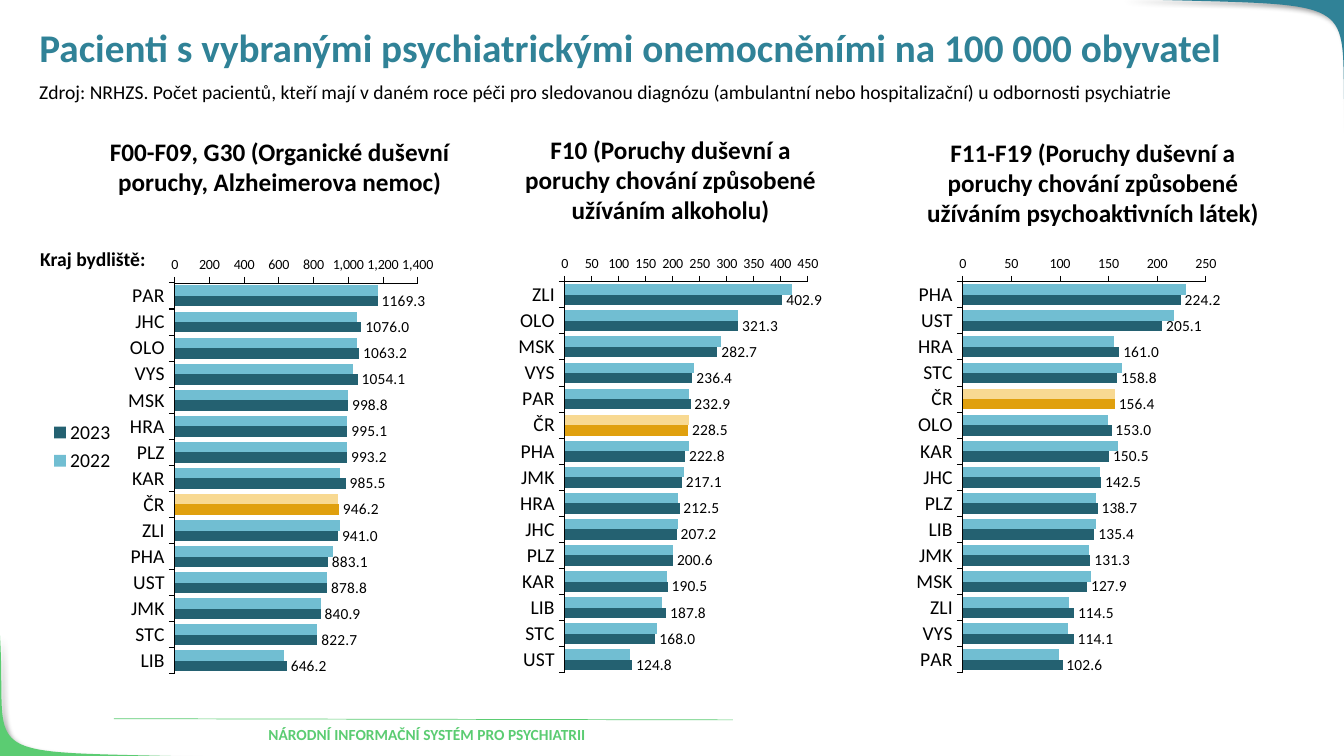
from lxml import etree
from pptx import Presentation
from pptx.chart.data import CategoryChartData
from pptx.dml.color import RGBColor
from pptx.enum.chart import (XL_CHART_TYPE, XL_LABEL_POSITION,
                             XL_LEGEND_POSITION, XL_TICK_MARK)
from pptx.enum.shapes import MSO_CONNECTOR
from pptx.enum.text import MSO_ANCHOR, MSO_AUTO_SIZE, PP_ALIGN
from pptx.oxml.ns import qn
from pptx.util import Cm, Pt

BAR = XL_CHART_TYPE.BAR_CLUSTERED
OUTSIDE_END = XL_LABEL_POSITION.OUTSIDE_END
LEGEND_LEFT = XL_LEGEND_POSITION.LEFT
TICK_OUT, TICK_NONE = XL_TICK_MARK.OUTSIDE, XL_TICK_MARK.NONE
STRAIGHT = MSO_CONNECTOR.STRAIGHT
LEFT, CENTER = PP_ALIGN.LEFT, PP_ALIGN.CENTER
MIDDLE = MSO_ANCHOR.MIDDLE
GROW, NO_FIT = MSO_AUTO_SIZE.SHAPE_TO_FIT_TEXT, MSO_AUTO_SIZE.NONE

FONT = "Calibri"
TEAL, GREEN, BLACK = "308297", "5BCC72", "000000"
# series name, bar colour, colour of the national average
SERIES = (("2022", "71BED2", "F8D992"), ("2023", "246171", "E0A00E"))
AVERAGE = "ČR"
PLOT = {"x": 0.341, "y": 0.156, "w": 0.612, "h": 0.822}
CHART_SIZE = (10.01, 11.99)

# heading, heading box, chart position, axis maximum and step, regions, values
PANELS = (
    ("F00-F09, G30 (Organické duševní poruchy, Alzheimerova nemoc)",
     (1.88, 3.3, 10.34, 1.8), (0.99, 5.26), (1400, 200),
     "PAR JHC OLO VYS MSK HRA PLZ KAR ČR ZLI PHA UST JMK STC LIB",
     (1170, 1050, 1050, 1030, 1000, 990, 990, 950, 940, 950, 910, 880, 840,
      820, 630),
     (1169.3, 1076, 1063.2, 1054.1, 998.8, 995.1, 993.2, 985.5, 946.2, 941,
      883.1, 878.8, 840.9, 822.7, 646.2)),
    ("F10 (Poruchy duševní a poruchy chování způsobené užíváním alkoholu)",
     (12.67, 3.25, 8.46, 2.57), (10.82, 5.23), (450, 50),
     "ZLI OLO MSK VYS PAR ČR PHA JMK HRA JHC PLZ KAR LIB STC UST",
     (420, 320, 290, 240, 230, 230, 230, 220, 210, 210, 200, 190, 180, 170,
      120),
     (402.9, 321.3, 282.7, 236.4, 232.9, 228.5, 222.8, 217.1, 212.5, 207.2,
      200.6, 190.5, 187.8, 168, 124.8)),
    ("F11-F19 (Poruchy duševní a poruchy chování způsobené užíváním "
     "psychoaktivních látek)",
     (22.68, 3.33, 9.73, 2.57), (20.85, 5.23), (250, 50),
     "PHA UST HRA STC ČR OLO KAR JHC PLZ LIB JMK MSK ZLI VYS PAR",
     (230, 217, 156, 164, 157, 149, 160, 141, 137, 137, 130, 132, 109, 108,
      99),
     (224.2, 205.1, 161, 158.8, 156.4, 153, 150.5, 142.5, 138.7, 135.4, 131.3,
      127.9, 114.5, 114.1, 102.6)),
)


def rgb(color):
    return RGBColor.from_string(color)


def set_font(font, size, color=BLACK, bold=False):
    values = {"name": FONT, "size": Pt(size), "bold": bold}
    for name, value in values.items():
        setattr(font, name, value)
    font.color.rgb = rgb(color)


def write(sp, text, size, color=BLACK, bold=False, align=LEFT):
    p = sp.text_frame.paragraphs[0]
    p.alignment = align
    r = p.add_run()
    r.text = text
    set_font(r.font, size, color, bold)
    return p


def add_text(slide, box, text, size, wrap=True, **style):
    sp = slide.shapes.add_textbox(*map(Cm, box))
    sp.text_frame.word_wrap = wrap
    sp.text_frame.auto_size = GROW
    write(sp, text, size, **style)


def add_title(slide, box, text):
    sp = slide.shapes.title
    sp.left, sp.top, sp.width, sp.height = map(Cm, box)
    tf = sp.text_frame
    for name, value in {"word_wrap": True, "auto_size": NO_FIT,
                        "vertical_anchor": MIDDLE}.items():
        setattr(tf, name, value)
    write(sp, text, 28, TEAL, True).line_spacing = 0.9


def add_corner(slide, curve, corner, color, steps=40):
    """Fill the area between a cubic curve and a slide corner."""
    points = []
    for i in range(steps + 1):
        t = i / steps
        weights = ((1 - t) ** 3, 3 * t * (1 - t) ** 2,
                   3 * t ** 2 * (1 - t), t ** 3)
        points.append(tuple(Cm(sum(w * pt[axis] for w, pt in zip(weights, curve)))
                            for axis in (0, 1)))
    points.append(tuple(map(Cm, corner)))
    builder = slide.shapes.build_freeform(*points[0])
    builder.add_line_segments(points[1:], close=True)
    sp = builder.convert_to_shape()
    sp.fill.solid()
    sp.fill.fore_color.rgb = rgb(color)
    sp.line.fill.background()
    # soft shadow
    sp.shadow.inherit = False
    effects = sp._element.spPr.find(qn("a:effectLst"))
    shadow = etree.SubElement(effects, qn("a:outerShdw"), blurRad=str(Pt(4)),
                              dist=str(Pt(3)), dir="2700000")
    tint = etree.SubElement(shadow, qn("a:srgbClr"), val=BLACK)
    etree.SubElement(tint, qn("a:alpha"), val="40000")


def add_line(slide, ends, color, width):
    line = slide.shapes.add_connector(STRAIGHT, *map(Cm, ends))
    line.line.color.rgb = rgb(color)
    line.line.width = Pt(width)
    etree.SubElement(line._element.spPr, qn("a:effectLst"))


def format_axis(axis, size, width):
    for name, value in {"has_major_gridlines": False,
                        "major_tick_mark": TICK_OUT,
                        "minor_tick_mark": TICK_NONE}.items():
        setattr(axis, name, value)
    set_font(axis.tick_labels.font, size)
    axis.format.line.color.rgb = rgb(BLACK)
    axis.format.line.width = Pt(width)


def place_plot(chart):
    area = chart._chartSpace.chart.plotArea
    for old in area.findall(qn("c:layout")):
        area.remove(old)
    layout = etree.Element(qn("c:layout"))
    area.insert(0, layout)
    manual = etree.SubElement(layout, qn("c:manualLayout"))
    settings = {"layoutTarget": "inner", "xMode": "edge", "yMode": "edge", **PLOT}
    for name, value in settings.items():
        etree.SubElement(manual, qn("c:" + name), val=str(value))


def add_bars(slide, position, scale, regions, values, legend):
    data = CategoryChartData()
    data.categories = regions
    for (name, _, _), numbers in zip(SERIES, values):
        data.add_series(name, numbers)
    frame = slide.shapes.add_chart(BAR, *map(Cm, position + CHART_SIZE), data)
    chart = frame.chart
    set_font(chart.font, 14)
    chart.has_title = False
    chart.has_legend = legend
    if legend:
        chart.legend.position = LEGEND_LEFT
        chart.legend.include_in_layout = False
        set_font(chart.legend.font, 14)
    place_plot(chart)

    # axes
    format_axis(chart.category_axis, 14, 0.75)
    chart.category_axis.reverse_order = True
    axis = chart.value_axis
    format_axis(axis, 10, 0.5)
    axis.minimum_scale = 0
    axis.maximum_scale, axis.major_unit = scale
    axis.tick_labels.number_format = "#,##0"
    axis.tick_labels.number_format_is_linked = False

    # bars
    plot = chart.plots[0]
    plot.gap_width, plot.overlap, plot.vary_by_categories = 50, 0, False
    for series, (_, color, average_color) in zip(plot.series, SERIES):
        average = series.points[regions.index(AVERAGE)]
        for item, shade in ((series, color), (average, average_color)):
            item.format.fill.solid()
            item.format.fill.fore_color.rgb = rgb(shade)
    labels = plot.series[1].data_labels
    for name, value in {"show_value": True, "position": OUTSIDE_END,
                        "number_format": "0.0",
                        "number_format_is_linked": False}.items():
        setattr(labels, name, value)
    set_font(labels.font, 11)


def main():
    prs = Presentation()
    prs.slide_width, prs.slide_height = Cm(33.87), Cm(19.05)
    slide = prs.slides.add_slide(prs.slide_layouts[5])

    # Corners and footer
    add_corner(slide, ((5.41, 19.08), (-0.86, 18.9), (0.2, 19.28), (0, 16)),
               (-0.03, 19.08), GREEN)
    add_corner(slide, ((28.22, -0.03), (34.8, 0.18), (33.68, -0.25), (33.91, 3.61)),
               (33.91, -0.03), TEAL)
    add_line(slide, (2.87, 18.11, 18.47, 18.14), GREEN, 0.5)
    add_text(slide, (3.78, 18.16, 13.97, 0.74),
             "NÁRODNÍ INFORMAČNÍ SYSTÉM PRO PSYCHIATRII", 11,
             color=GREEN, bold=True, align=CENTER)

    # Title and source
    add_title(slide, (0.74, 0.46, 32.41, 1.6),
              "Pacienti s vybranými psychiatrickými onemocněními na 100 000 obyvatel")
    add_text(slide, (0.74, 1.88, 32.33, 1.45),
             "Zdroj: NRHZS. Počet pacientů, kteří mají v daném roce péči pro "
             "sledovanou diagnózu (ambulantní nebo hospitalizační) u odbornosti "
             "psychiatrie", 14)

    # Diagnosis panels
    for i, (heading, box, position, scale, regions, *values) in enumerate(PANELS):
        add_bars(slide, position, scale, regions.split(), values, legend=i == 0)
        add_text(slide, box, heading, 18, bold=True, align=CENTER)
    add_text(slide, (0.74, 6.1, 3.2, 0.86), "Kraj bydliště:", 14, wrap=False,
             bold=True, align=CENTER)

    prs.save("out.pptx")


if __name__ == "__main__":
    main()
